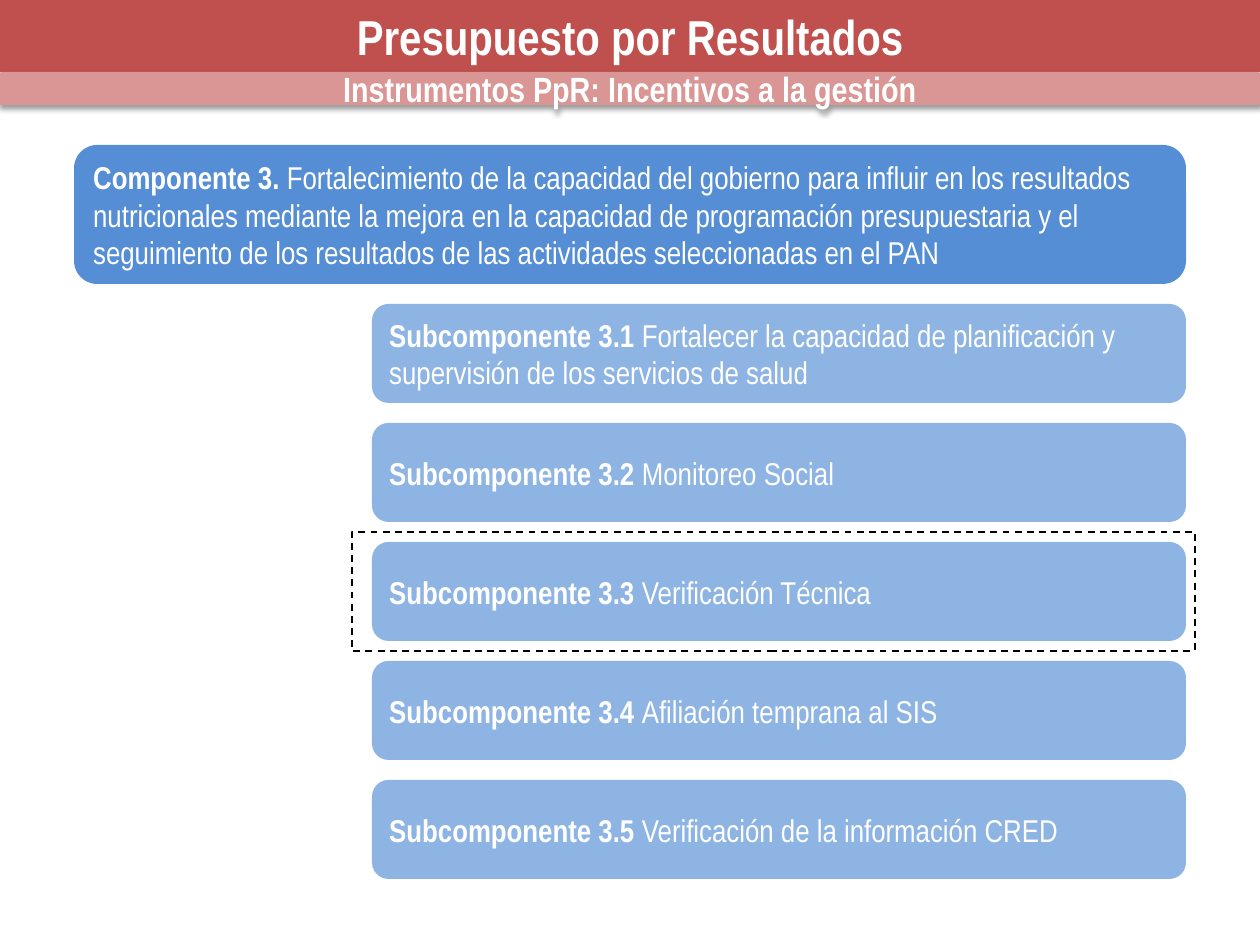
from lxml.etree import SubElement
from pptx import Presentation
from pptx.dml.color import RGBColor
from pptx.enum.dml import MSO_LINE
from pptx.enum.shapes import MSO_SHAPE
from pptx.enum.text import MSO_ANCHOR, MSO_AUTO_SIZE, PP_ALIGN
from pptx.oxml.ns import qn
from pptx.util import Emu, Pt

COLORS = {
    "title": "C0504D",
    "subtitle": "D99694",
    "component": "558ED5",
    "subcomponent": "8EB4E3",
    "text": "FFFFFF",
    "outline": "000000",
}
FONT = "Arial Narrow"
EMU_PER_PX = 914400 / 126


def place(box, left, top, width, height, color):
    """Position a box in px and give it a plain fill."""
    box.left, box.top, box.width, box.height = (
        Emu(round(length * EMU_PER_PX)) for length in (left, top, width, height)
    )
    box.fill.solid()
    box.fill.fore_color.rgb = RGBColor.from_string(COLORS[color])
    box.line.fill.background()


def write(box, runs, size, align=PP_ALIGN.LEFT, anchor=MSO_ANCHOR.MIDDLE):
    """Fill a box with (text, bold) runs."""
    frame = box.text_frame
    frame.word_wrap = True
    frame.auto_size = MSO_AUTO_SIZE.NONE
    frame.vertical_anchor = anchor
    para = frame.paragraphs[0]
    para.alignment = align
    for text, bold in runs:
        span = para.add_run()
        span.text = text
        span.font.name = FONT
        span.font.size = Pt(size)
        span.font.bold = bold
        span.font.color.rgb = RGBColor.from_string(COLORS["text"])


deck = Presentation()
deck.slide_width = Emu(round(1260 * EMU_PER_PX))
deck.slide_height = Emu(round(945 * EMU_PER_PX))
page = deck.slides.add_slide(deck.slide_layouts[5])

# Title band
title = page.shapes.title
place(title, 0, 0, 1260, 72, "title")
write(title, [("Presupuesto por Resultados", True)], 28, PP_ALIGN.CENTER, MSO_ANCHOR.TOP)

# Subtitle band with a soft shadow below
subtitle = page.shapes.add_shape(MSO_SHAPE.ROUNDED_RECTANGLE, 0, 0, 0, 0)
subtitle.adjustments[0] = 0.05
place(subtitle, 0, 72, 1260, 33, "subtitle")
write(subtitle, [("Instrumentos PpR: Incentivos a la gestión", True)], 20, PP_ALIGN.CENTER)
subtitle.shadow.inherit = False
effects = subtitle.element.spPr.find(qn("a:effectLst"))
shadow = SubElement(effects, qn("a:outerShdw"), blurRad=str(Pt(3.1)), dist=str(Pt(1.6)),
                    dir="5400000", rotWithShape="0")
shadow_color = SubElement(shadow, qn("a:srgbClr"), val=COLORS["outline"])
SubElement(shadow_color, qn("a:alpha"), val="38000")

# Main component
component = page.shapes.add_shape(MSO_SHAPE.ROUNDED_RECTANGLE, 0, 0, 0, 0)
component.shadow.inherit = False
place(component, 74, 145, 1112, 139, "component")
write(component, [
    ("Componente 3.", True),
    (" Fortalecimiento de la capacidad del gobierno para influir en los resultados "
     "nutricionales mediante la mejora en la capacidad de programación presupuestaria "
     "y el seguimiento de los resultados de las actividades seleccionadas en el PAN", False),
], 18)

# Subcomponents, evenly stacked
subcomponents = [
    "Fortalecer la capacidad de planificación y supervisión de los servicios de salud",
    "Monitoreo Social",
    "Verificación Técnica",
    "Afiliación temprana al SIS",
    "Verificación de la información CRED",
]
FIRST_TOP, STEP = 304, 119
for index, description in enumerate(subcomponents):
    box = page.shapes.add_shape(MSO_SHAPE.ROUNDED_RECTANGLE, 0, 0, 0, 0)
    box.shadow.inherit = False
    place(box, 372, FIRST_TOP + index * STEP, 814, 99, "subcomponent")
    write(box, [(f"Subcomponente 3.{index + 1} ", True), (description, False)], 18)

# Dashed frame around subcomponent 3.3
highlight = page.shapes.add_shape(MSO_SHAPE.RECTANGLE, 0, 0, 0, 0)
highlight.shadow.inherit = False
place(highlight, 352, FIRST_TOP + 2 * STEP - 10, 843, STEP, "text")
highlight.fill.background()
highlight.line.color.rgb = RGBColor.from_string(COLORS["outline"])
highlight.line.width = Pt(1)
highlight.line.dash_style = MSO_LINE.DASH

deck.save("out.pptx")
